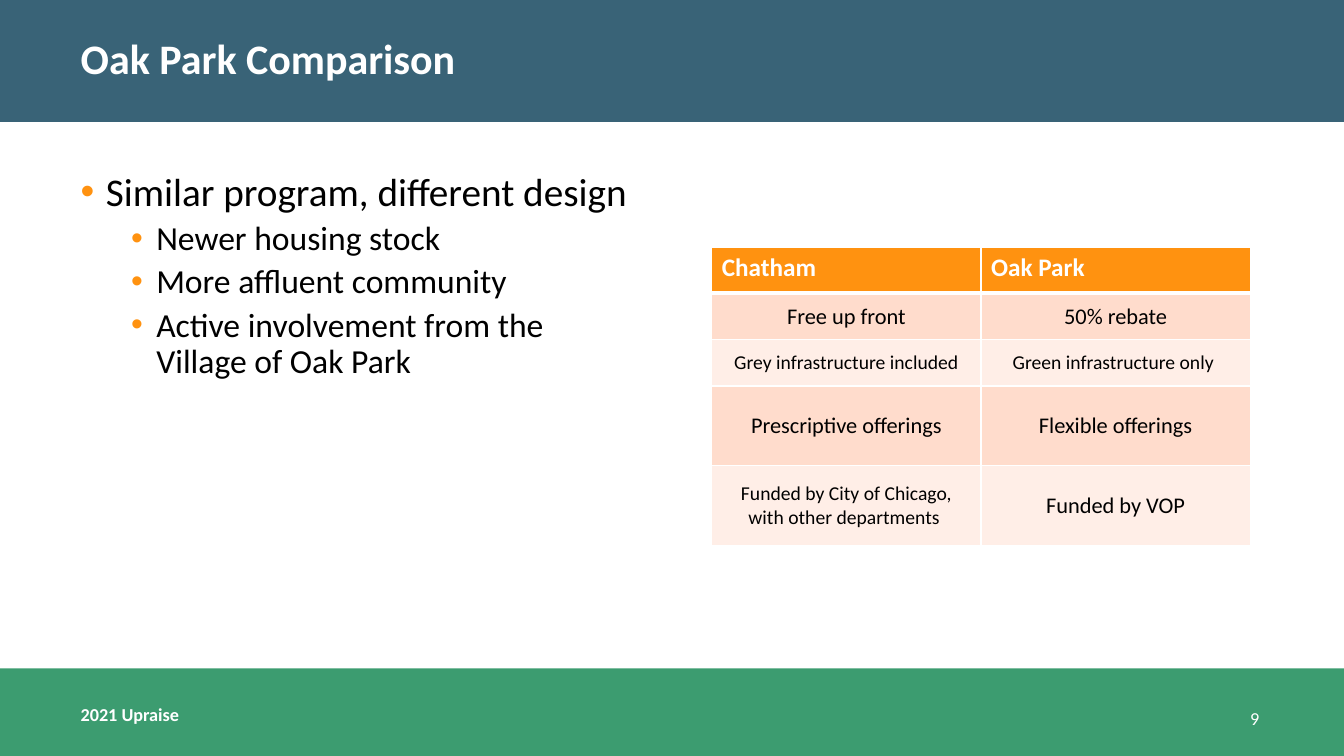
"""Build the Oak Park comparison slide with its bullet list and program table."""
from lxml import etree
from pptx import Presentation
from pptx.dml.color import RGBColor
from pptx.enum.shapes import MSO_SHAPE
from pptx.enum.text import MSO_ANCHOR, MSO_AUTO_SIZE, PP_ALIGN
from pptx.oxml.ns import qn
from pptx.util import Inches, Pt

RECTANGLE = MSO_SHAPE.RECTANGLE
TOP, MIDDLE = MSO_ANCHOR.TOP, MSO_ANCHOR.MIDDLE
LEFT, CENTER, RIGHT = PP_ALIGN.LEFT, PP_ALIGN.CENTER, PP_ALIGN.RIGHT
NO_AUTOFIT = MSO_AUTO_SIZE.NONE
WHITE, BLACK, ORANGE, BLUE, GREEN = "FFFFFF", "000000", "FF9210", "396377", "3C9C70"
DARK_BAND, LIGHT_BAND = "FFDCCC", "FFEEE7"


def color(hex_string):
    return RGBColor.from_string(hex_string)


def write(frame, text, size, ink=BLACK, bold=False, align=LEFT, anchor=TOP, insets=None):
    frame.word_wrap = True
    frame.vertical_anchor = anchor
    if insets:
        frame.auto_size = NO_AUTOFIT
        (frame.margin_left, frame.margin_top,
         frame.margin_right, frame.margin_bottom) = [Inches(inset) for inset in insets]
    paragraph = frame.paragraphs[0]
    if paragraph.runs:
        paragraph = frame.add_paragraph()
    paragraph.alignment = align
    run = paragraph.add_run()
    run.text = text
    run.font.name = "Calibri"
    run.font.size = Pt(size)
    run.font.bold = bold
    run.font.color.rgb = color(ink)
    return paragraph


deck = Presentation()
deck.slide_width, deck.slide_height = Inches(13.33), Inches(7.5)
slide = deck.slides.add_slide(deck.slide_layouts[1])
title, body = slide.placeholders

for top, height, fill in [(6.63, 0.87, GREEN), (0, 1.21, BLUE)]:
    band = slide.shapes.add_shape(RECTANGLE, 0, Inches(top), deck.slide_width, Inches(height))
    band.shadow.inherit = False
    band.fill.solid()
    band.fill.fore_color.rgb = color(fill)
    band.line.fill.background()

page_number = slide.shapes.add_textbox(Inches(11.04), Inches(7.02), Inches(1.45), Inches(0.48))
write(page_number.text_frame, "9", 13, WHITE, align=RIGHT, insets=(0, 0, 0, 0.3))
footer = slide.shapes.add_textbox(0, Inches(6.98), Inches(4.06), Inches(0.52))
write(footer.text_frame, "2021 Upraise", 13, WHITE, bold=True, insets=(0.8, 0, 0.8, 0.3))

body.left, body.top, body.width, body.height = 0, Inches(1.21), Inches(7.06), Inches(5.42)
points = [
    ("Similar program, different design", 0),
    ("Newer housing stock", 1),
    ("More affluent community", 1),
    ("Active involvement from the Village of Oak Park", 1),
]
for text, level in points:
    point = write(body.text_frame, text, 24 if level else 28, insets=(0.8, 0.5, 0.8, 0.8))
    point.level = level
    point.line_spacing = 0.9
    point.space_before = Pt(5 * level)
    properties = point._p.get_or_add_pPr()
    properties.set("marL", str(Inches(0.25 + 0.5 * level)))
    properties.set("indent", str(Inches(-0.25)))
    bullet_color = etree.SubElement(properties, qn("a:buClr"))
    etree.SubElement(bullet_color, qn("a:srgbClr"), val=ORANGE)
    etree.SubElement(properties, qn("a:buFont"), typeface="Arial")
    etree.SubElement(properties, qn("a:buChar"), char="•")

programs = [
    (0.46, ORANGE, ("Chatham", 18), ("Oak Park", 18)),
    (0.46, DARK_BAND, ("Free up front", 16), ("50% rebate", 16)),
    (0.46, LIGHT_BAND, ("Grey infrastructure included", 14), ("Green infrastructure only ", 14)),
    (0.79, DARK_BAND, ("Prescriptive offerings", 16), ("Flexible offerings", 16)),
    (0.79, LIGHT_BAND, ("Funded by City of Chicago, with other departments ", 14),
     ("Funded by VOP", 16)),
]
comparison = slide.shapes.add_table(
    len(programs), 2, Inches(7.06), Inches(2.45), Inches(5.34), Inches(2.96)).table
for row, (height, fill, *entries) in enumerate(programs):
    comparison.rows[row].height = Inches(height)
    for column, (text, size) in enumerate(entries):
        cell = comparison.cell(row, column)
        cell.fill.solid()
        cell.fill.fore_color.rgb = color(fill)
        if row == 0:
            write(cell.text_frame, text, size, WHITE, bold=True)
        else:
            write(cell.text_frame, text, size, align=CENTER)
            cell.vertical_anchor = MIDDLE
        edges = {"a:lnL": 1, "a:lnR": 1, "a:lnT": 3 if row == 1 else 1, "a:lnB": 1 if row else 3}
        cell_properties = cell._tc.get_or_add_tcPr()
        for position, (edge, width) in enumerate(edges.items()):
            border = etree.Element(qn(edge), w=str(Pt(width)))
            border_fill = etree.SubElement(border, qn("a:solidFill"))
            etree.SubElement(border_fill, qn("a:srgbClr"), val=WHITE)
            cell_properties.insert(position, border)

title.left, title.top, title.width, title.height = 0, 0, deck.slide_width, Inches(1.21)
heading = write(title.text_frame, "Oak Park Comparison", 30, WHITE, bold=True,
                anchor=MIDDLE, insets=(0.8, 0, 0.8, 0))
heading.line_spacing = 0.9
slide.shapes.element.append(title.element)

deck.save("out.pptx")
